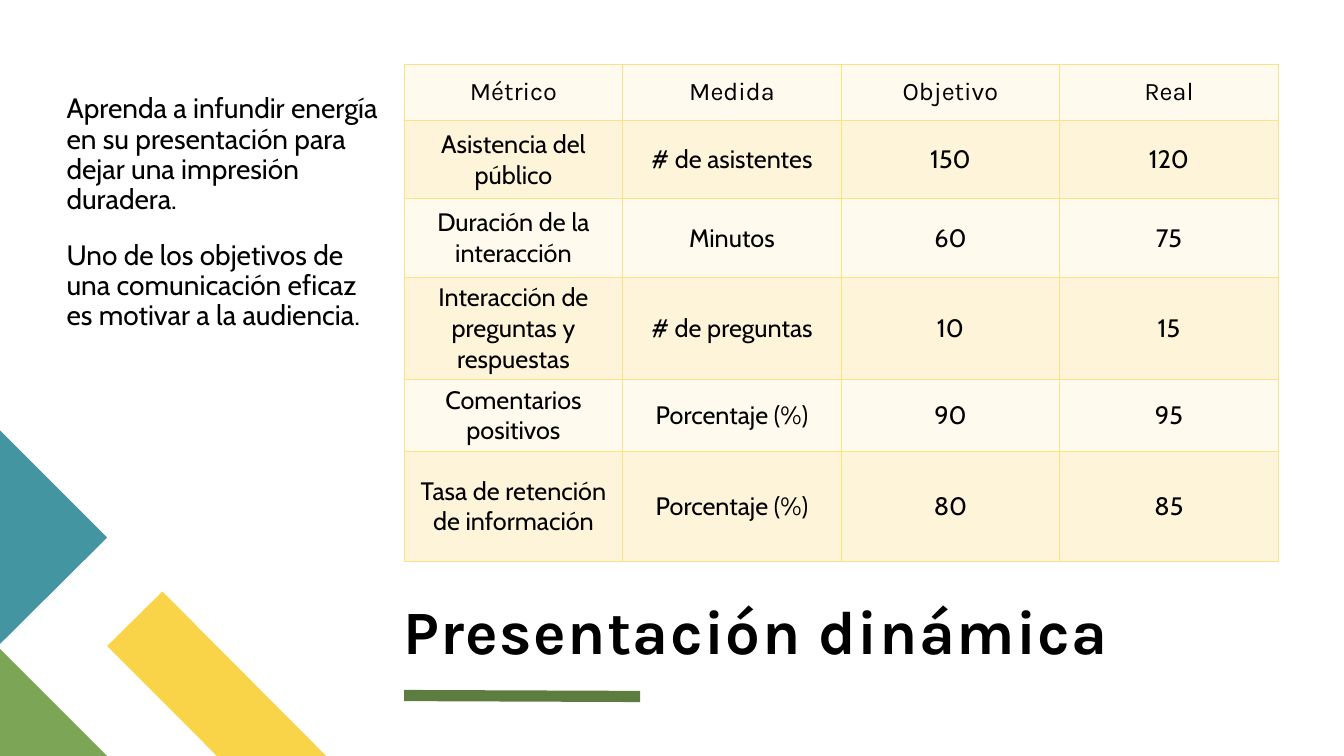
from lxml import etree
from pptx import Presentation
from pptx.dml.color import RGBColor
from pptx.enum.shapes import MSO_CONNECTOR
from pptx.enum.text import MSO_ANCHOR, MSO_AUTO_SIZE, PP_ALIGN
from pptx.oxml.ns import qn
from pptx.util import Pt

STRAIGHT = MSO_CONNECTOR.STRAIGHT
TOP, MIDDLE, BOTTOM = MSO_ANCHOR.TOP, MSO_ANCHOR.MIDDLE, MSO_ANCHOR.BOTTOM
LEFT, CENTER = PP_ALIGN.LEFT, PP_ALIGN.CENTER
NO_AUTOFIT = MSO_AUTO_SIZE.NONE

TITLE = "Presentación dinámica"
MESSAGES = [
    "Aprenda a infundir energía en su presentación para dejar una impresión duradera.",
    "Uno de los objetivos de una comunicación eficaz es motivar a la audiencia.",
]
METRICS = [
    ("Métrico", "Medida", "Objetivo", "Real"),
    ("Asistencia del público", "# de asistentes", "150", "120"),
    ("Duración de la interacción", "Minutos", "60", "75"),
    ("Interacción de preguntas y respuestas", "# de preguntas", "10", "15"),
    ("Comentarios positivos", "Porcentaje (%)", "90", "95"),
    ("Tasa de retención de información", "Porcentaje (%)", "80", "85"),
]
ROW_HEIGHTS = [40, 56, 56, 73, 51, 79]
COLUMN_WIDTH = 156.1
CORNER_BLOCKS = [
    ("F9D448", [(233, 540), (155, 540), (76.5, 461.5), (116, 422.5)]),
    ("7CA655", [(76.5, 540), (0, 540), (0, 463.5)]),
    ("4495A2", [(0, 307.5), (76.5, 384), (0, 460)]),
]


def color(hex_code):
    return RGBColor.from_string(hex_code)


class MetricsSlide:
    """Holds the deck's style and the slide being filled."""

    heading_font, body_font = "Karla", "Cabin"
    ink, rule, border = "000000", "5D7D40", "FBE284"
    bands = ("FEFAED", "FDF4D9")

    def __init__(self, slide):
        self.slide = slide

    def style(self, paragraph, font, size, align, bold=False):
        paragraph.alignment = align
        paragraph.font.name = font
        paragraph.font.size = Pt(size)
        paragraph.font.bold = bold
        paragraph.font.color.rgb = color(self.ink)

    def place(self, holder, box, insets, anchor):
        """Moves a placeholder and returns its text frame with insets (l, t, r, b)."""
        holder.left, holder.top, holder.width, holder.height = map(Pt, box)
        frame = holder.text_frame
        frame.margin_left, frame.margin_top, frame.margin_right, frame.margin_bottom = map(Pt, insets)
        frame.word_wrap = True
        frame.auto_size = NO_AUTOFIT
        frame.vertical_anchor = anchor
        return frame

    def title(self, text, box):
        frame = self.place(self.slide.shapes.title, box, (0, 0, 0, 0), BOTTOM)
        frame.text = text
        heading = frame.paragraphs[0]
        self.style(heading, self.heading_font, 44, LEFT, bold=True)
        heading.line_spacing = 0.8
        heading.runs[0].font._element.set("spc", "100")

    def body(self, messages, box):
        frame = self.place(self.slide.placeholders[1], box, (0, 21.6, 7.2, 3.6), TOP)
        frame.text = "\n".join(messages)
        for message in frame.paragraphs:
            self.style(message, self.body_font, 20, LEFT)
            message.line_spacing = 0.9
            message.space_before = Pt(18)
            properties = message._p.get_or_add_pPr()
            properties.set("marL", "0")
            properties.set("indent", "0")
            bullet = etree.Element(qn("a:buNone"))
            properties.find(qn("a:defRPr")).addprevious(bullet)

    def block(self, fill, points):
        corners = [(Pt(x), Pt(y)) for x, y in points]
        builder = self.slide.shapes.build_freeform(*corners[0], scale=1.0)
        builder.add_line_segments(corners[1:], close=True)
        shape = builder.convert_to_shape()
        shape.shadow.inherit = False
        shape.fill.solid()
        shape.fill.fore_color.rgb = color(fill)
        shape.line.fill.background()

    def underline(self, start, end, width):
        line = self.slide.shapes.add_connector(STRAIGHT, *map(Pt, start + end))
        line.line.color.rgb = color(self.rule)
        line.line.width = Pt(width)
        etree.SubElement(line._element.spPr, qn("a:effectLst"))

    def cell_borders(self, cell):
        properties = cell._tc.get_or_add_tcPr()
        for side in ("lnL", "lnR", "lnT", "lnB"):
            edge = etree.SubElement(properties, qn(f"a:{side}"), w=str(Pt(1)))
            fill = etree.SubElement(edge, qn("a:solidFill"))
            etree.SubElement(fill, qn("a:srgbClr"), val=self.border)

    def table(self, rows, left, top, column_width, heights):
        columns = len(rows[0])
        table = self.slide.shapes.add_table(
            len(rows), columns, Pt(left), Pt(top),
            Pt(column_width * columns), Pt(sum(heights))).table
        table.first_row = table.horz_banding = False
        for column in table.columns:
            column.width = Pt(column_width)
        for r, (values, height) in enumerate(zip(rows, heights)):
            table.rows[r].height = Pt(height)
            font = self.body_font if r else self.heading_font
            for c, value in enumerate(values):
                cell = table.cell(r, c)
                cell.text = value
                cell.vertical_anchor = MIDDLE
                self.style(cell.text_frame.paragraphs[0], font, 18, CENTER)
                self.cell_borders(cell)
                cell.fill.solid()
                cell.fill.fore_color.rgb = color(self.bands[r % 2])


def main():
    deck = Presentation()
    deck.slide_width, deck.slide_height = Pt(960), Pt(540)
    metrics = MetricsSlide(deck.slides.add_slide(deck.slide_layouts[1]))
    for fill, points in CORNER_BLOCKS:
        metrics.block(fill, points)
    metrics.underline((288.7, 496.8), (457.2, 497.5), 8)
    metrics.title(TITLE, (288, 367.2, 625, 108.7))
    metrics.body(MESSAGES, (47.5, 46.1, 235.4, 314.6))
    metrics.table(METRICS, 288.7, 46.1, COLUMN_WIDTH, ROW_HEIGHTS)
    deck.save("out.pptx")


if __name__ == "__main__":
    main()
